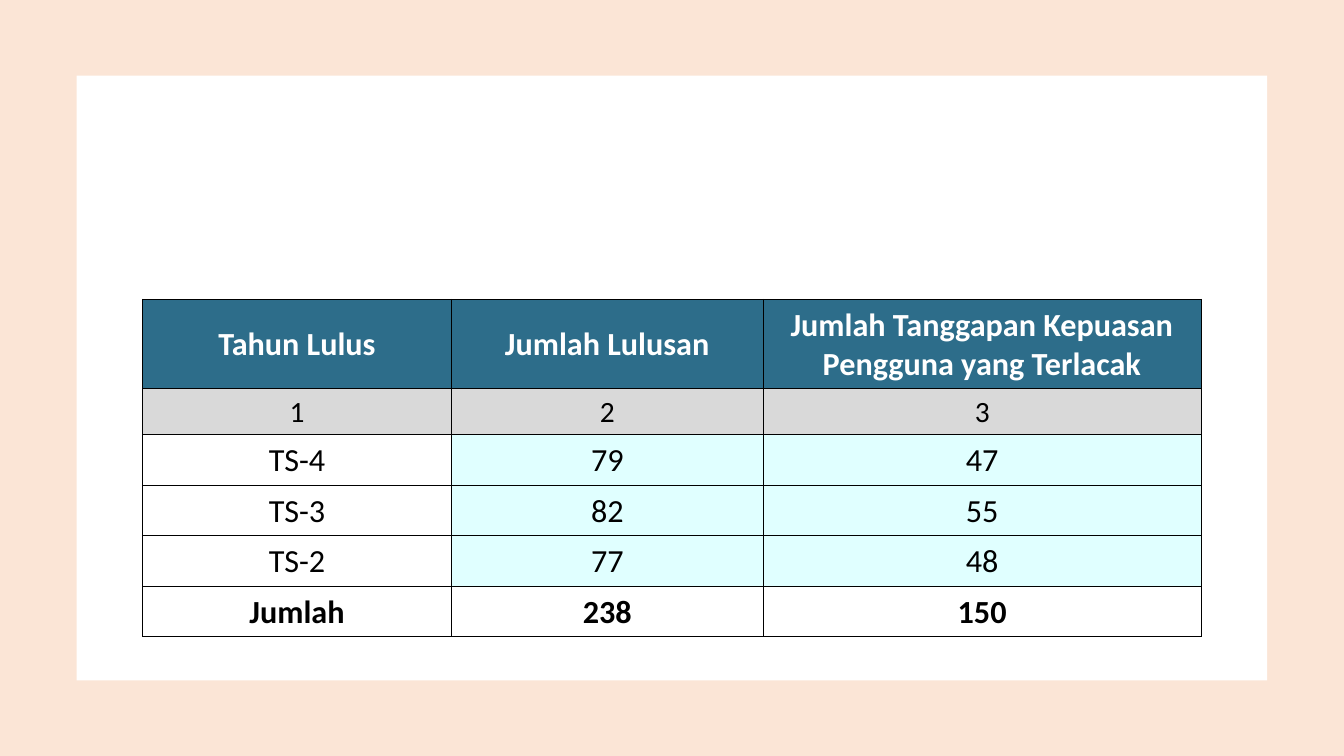
from dataclasses import dataclass
from typing import Optional

from lxml.etree import SubElement
from pptx import Presentation
from pptx.dml.color import RGBColor
from pptx.enum.shapes import MSO_SHAPE
from pptx.enum.text import MSO_ANCHOR as ANCHOR, PP_ALIGN as ALIGN
from pptx.oxml.ns import qn
from pptx.util import Emu, Pt

PX = 9525  # EMU in one px, 96 px to the inch

PEACH = RGBColor(0xFB, 0xE5, 0xD6)
WHITE = RGBColor(0xFF, 0xFF, 0xFF)
BLACK = RGBColor(0x00, 0x00, 0x00)
TEAL = RGBColor(0x2D, 0x6D, 0x8A)
GREY = RGBColor(0xD9, 0xD9, 0xD9)
CYAN = RGBColor(0xE0, 0xFF, 0xFF)


@dataclass(frozen=True)
class Panel:
    x: int
    y: int
    w: int
    h: int
    fill: RGBColor


@dataclass(frozen=True)
class RowStyle:
    height: int
    label_fill: Optional[RGBColor] = None
    value_fill: Optional[RGBColor] = None
    size: int = 23
    bold: bool = False
    color: RGBColor = BLACK


HEADER = RowStyle(85, TEAL, TEAL, bold=True, color=WHITE)
NUMBERING = RowStyle(44, GREY, GREY, size=21)
DATA = RowStyle(48, value_fill=CYAN)
TOTAL = RowStyle(48, bold=True)

PANELS = [Panel(0, 0, 1280, 720, PEACH), Panel(73, 72, 1134, 576, WHITE)]
COL_WIDTHS = [294, 297, 417]
ROWS = [
    (HEADER, ("Tahun Lulus", "Jumlah Lulusan",
              "Jumlah Tanggapan Kepuasan Pengguna yang Terlacak")),
    (NUMBERING, ("1", "2", "3")),
    (DATA, ("TS-4", "79", "47")),
    (DATA, ("TS-3", "82", "55")),
    (DATA, ("TS-2", "77", "48")),
    (TOTAL, ("Jumlah", "238", "150")),
]
CELL_FORMAT = {
    "vertical_anchor": ANCHOR.MIDDLE,
    "margin_left": Emu(2 * PX),
    "margin_right": Emu(2 * PX),
    "margin_top": Emu(2 * PX),
    "margin_bottom": Emu(0),
}


def px(n: int) -> Emu:
    return Emu(n * PX)


def set_all(target, values: dict) -> None:
    for name, value in values.items():
        setattr(target, name, value)


def add_panel(slide, panel: Panel) -> None:
    sp = slide.shapes.add_shape(MSO_SHAPE.RECTANGLE, px(panel.x), px(panel.y),
                                px(panel.w), px(panel.h))
    sp.shadow.inherit = False
    sp.fill.solid()
    sp.fill.fore_color.rgb = panel.fill
    sp.line.fill.background()


def add_borders(cell, color: RGBColor) -> None:
    tc_pr = cell._tc.get_or_add_tcPr()
    for side in ("lnL", "lnR", "lnT", "lnB"):
        ln = SubElement(tc_pr, qn(f"a:{side}"), w=str(Pt(0.5)))
        fill = SubElement(ln, qn("a:solidFill"))
        SubElement(fill, qn("a:srgbClr"), val=str(color))


def format_cell(cell, text: str, style: RowStyle, fill: Optional[RGBColor]) -> None:
    set_all(cell, CELL_FORMAT)
    add_borders(cell, BLACK)  # borders come before the fill in the schema
    if fill is None:
        cell.fill.background()
    else:
        cell.fill.solid()
        cell.fill.fore_color.rgb = fill
    p = cell.text_frame.paragraphs[0]
    p.alignment = ALIGN.CENTER
    r = p.add_run()
    r.text = text
    set_all(r.font, {"name": "Calibri", "size": Pt(style.size), "bold": style.bold})
    r.font.color.rgb = style.color


def add_graduate_table(slide, x: int, y: int) -> None:
    height = sum(style.height for style, _ in ROWS)
    table = slide.shapes.add_table(len(ROWS), len(COL_WIDTHS), px(x), px(y),
                                   px(sum(COL_WIDTHS)), px(height)).table
    set_all(table, {"first_row": False, "horz_banding": False})
    for col, width in zip(table.columns, COL_WIDTHS):
        col.width = px(width)
    for row, (style, texts) in zip(table.rows, ROWS):
        row.height = px(style.height)
        for i, (cell, text) in enumerate(zip(row.cells, texts)):
            fill = style.value_fill if i else style.label_fill
            format_cell(cell, text, style, fill)


def main() -> None:
    prs = Presentation()
    set_all(prs, {"slide_width": px(1280), "slide_height": px(720)})
    slide = prs.slides.add_slide(prs.slide_layouts[6])

    # Peach backdrop and white panel
    for panel in PANELS:
        add_panel(slide, panel)

    # Graduates and user responses by year
    add_graduate_table(slide, 136, 285)

    prs.save("out.pptx")


if __name__ == "__main__":
    main()
